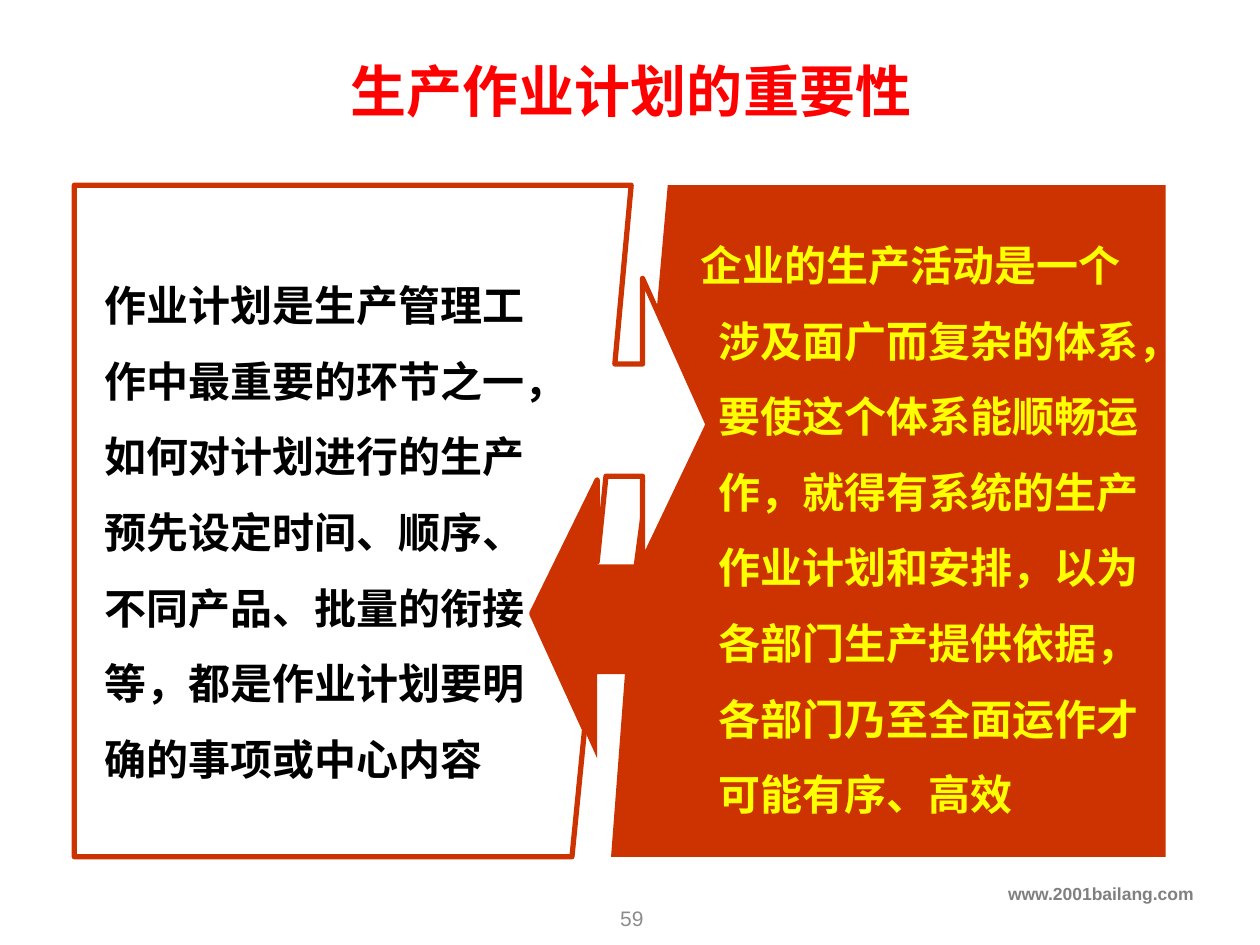
from lxml import etree
from pptx import Presentation
from pptx import util as u
from pptx.dml.color import RGBColor
from pptx.enum import text as t
from pptx.oxml.ns import qn

RED = RGBColor(0xFF, 0x00, 0x00)
BRICK = RGBColor(0xCC, 0x33, 0x00)
YELLOW = RGBColor(0xFF, 0xFF, 0x00)
BLACK = RGBColor(0x00, 0x00, 0x00)
GRAY = RGBColor(0x80, 0x80, 0x80)
LIGHT_GRAY = RGBColor(0x8C, 0x8C, 0x8C)
LATIN, HAN = "Arial", "Noto Sans CJK SC"

TITLE = "生产作业计划的重要性"
PLAN_TEXT = ("作业计划是生产管理工作中最重要的环节之一，如何对计划进行的生产"
             "预先设定时间、顺序、不同产品、批量的衔接等，都是作业计划要明"
             "确的事项或中心内容")
SYSTEM_TEXT = ("企业的生产活动是一个涉及面广而复杂的体系，要使这个体系能顺畅运"
               "作，就得有系统的生产作业计划和安排，以为各部门生产提供依据，"
               "各部门乃至全面运作才可能有序、高效")
SITE = "www.2001bailang.com"
PAGE_NUMBER = "59"

LEFT_PANEL = [(4.54, 6.8), (0.59, 6.8), (0.59, 1.47), (5.01, 1.47),
              (4.88, 2.89), (5.1, 2.89), (5.1, 2.21), (5.62, 3.37),
              (5.1, 4.46), (5.1, 3.78), (4.81, 3.78), (4.74, 4.46),
              (4.74, 3.81), (4.22, 4.87), (4.64, 5.79)]
RIGHT_PANEL = [(5.3, 1.47), (9.25, 1.47), (9.25, 6.8), (4.85, 6.8),
               (4.96, 5.35), (4.74, 5.35), (4.74, 6.02), (4.23, 4.89),
               (4.74, 3.81), (4.74, 4.48), (5.03, 4.48), (5.12, 3.81),
               (5.1, 4.43), (5.62, 3.35), (5.21, 2.48)]


def write(frame, words, size, color, font=LATIN, bold=True,
          align=t.PP_ALIGN.LEFT, anchor=t.MSO_ANCHOR.TOP):
    frame.word_wrap = True
    frame.vertical_anchor = anchor
    para = frame.paragraphs[0]
    para.alignment = align
    span = para.add_run()
    span.text = words
    span.font.size = u.Pt(size)
    span.font.bold = bold
    span.font.name = font
    span.font.color.rgb = color
    east = etree.SubElement(span.font._element, qn("a:ea"))
    east.set("typeface", HAN)
    return para


def add_box(page, place):
    return page.shapes.add_textbox(*map(u.Inches, place)).text_frame


def add_panel(page, outline):
    points = [(u.Inches(x), u.Inches(y)) for x, y in outline]
    builder = page.shapes.build_freeform(*points[0])
    builder.add_line_segments(points[1:], close=True)
    panel = builder.convert_to_shape()
    panel.shadow.inherit = False
    return panel


def add_passage(page, place, words, color, margin=0, indent=0):
    frame = add_box(page, place)
    frame.margin_left = frame.margin_right = 0
    frame.margin_top = frame.margin_bottom = 0
    para = write(frame, words, 24, color, HAN)
    para.line_spacing = 1.5
    props = para._p.get_or_add_pPr()
    props.set("marL", str(u.Inches(margin)))
    props.set("indent", str(u.Inches(indent)))


def main():
    deck = Presentation()
    deck.slide_width, deck.slide_height = u.Inches(10), u.Inches(7.5)
    page = deck.slides.add_slide(deck.slide_layouts[5])

    title = page.shapes.title
    title.left, title.top = u.Inches(0.51), u.Inches(0.4)
    title.width, title.height = u.Inches(9), u.Inches(0.63)
    write(title.text_frame, TITLE, 32, RED, align=t.PP_ALIGN.CENTER,
          anchor=t.MSO_ANCHOR.MIDDLE)

    write(add_box(page, (0, 6.96, 9.57, 0.35)), SITE, 10, GRAY,
          align=t.PP_ALIGN.RIGHT)
    write(add_box(page, (3.89, 7.09, 2.25, 0.4)), PAGE_NUMBER, 12, LIGHT_GRAY,
          bold=False, align=t.PP_ALIGN.CENTER, anchor=t.MSO_ANCHOR.MIDDLE)

    left = add_panel(page, LEFT_PANEL)
    left.fill.background()
    left.line.color.rgb = BRICK
    left.line.width = u.Pt(3)
    etree.SubElement(left.line._get_or_add_ln(), qn("a:round"))

    right = add_panel(page, RIGHT_PANEL)
    right.fill.solid()
    right.fill.fore_color.rgb = BRICK
    right.line.fill.background()

    add_passage(page, (0.83, 2.02, 3.61, 4.24), PLAN_TEXT, BLACK)
    add_passage(page, (5.55, 1.7, 3.58, 4.85), SYSTEM_TEXT, YELLOW, 0.15, -0.14)

    deck.save("out.pptx")


if __name__ == "__main__":
    main()
